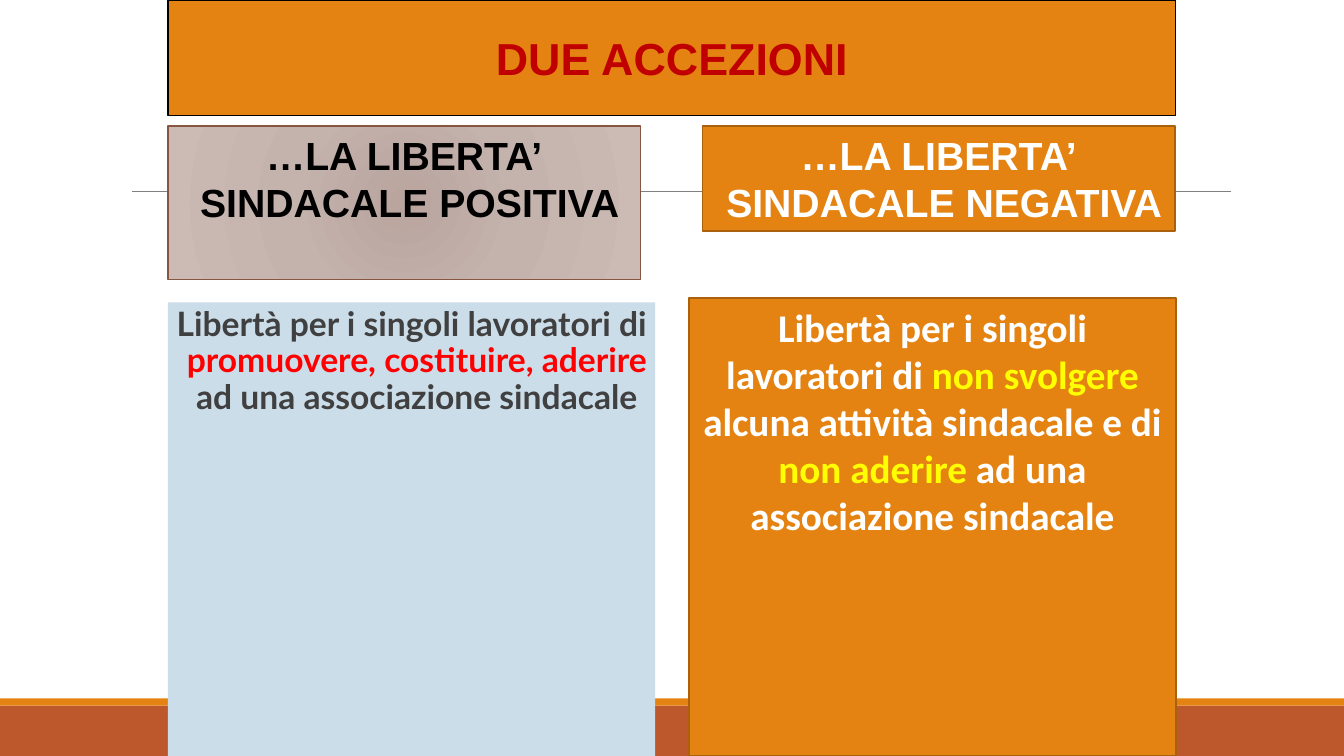
from dataclasses import dataclass
from typing import Optional

import pptx
import pptx.dml.color
import pptx.enum.shapes
import pptx.enum.text
import pptx.oxml
import pptx.oxml.ns
import pptx.util
from lxml import etree

RGBColor = pptx.dml.color.RGBColor
MSO_ANCHOR = pptx.enum.text.MSO_ANCHOR

EMU_PER_PX = 9525
SLIDE_WIDTH, SLIDE_HEIGHT = 1280, 720
TITLE_ONLY_LAYOUT = 5

ORANGE = RGBColor(0xE4, 0x83, 0x12)
DARK_ORANGE = RGBColor(0xA9, 0x61, 0x0D)
RUST = RGBColor(0xBD, 0x58, 0x2C)
BROWN = RGBColor(0x86, 0x56, 0x40)
LIGHT_BLUE = RGBColor(0xCC, 0xDD, 0xEA)
GRAY = RGBColor(0x80, 0x80, 0x80)
DARK_GRAY = RGBColor(0x40, 0x40, 0x40)
BLACK = RGBColor(0, 0, 0)
WHITE = RGBColor(0xFF, 0xFF, 0xFF)
RED = RGBColor(0xFF, 0, 0)
DARK_RED = RGBColor(0xC0, 0, 0)
YELLOW = RGBColor(0xFF, 0xFF, 0)
MAUVE_STOPS = (
    (0, RGBColor(0xB9, 0xA4, 0x9E)),
    (45, RGBColor(0xC4, 0xB2, 0xAD)),
    (100, RGBColor(0xCC, 0xBA, 0xB5)),
)

Paragraphs = list[list[tuple[str, RGBColor]]]


@dataclass(frozen=True)
class Box:
    left: int
    top: int
    width: int
    height: int
    fill: Optional[RGBColor] = None
    line: Optional[RGBColor] = None
    line_width: float = 1.25


FOOTER_BAND = Box(0, 672, SLIDE_WIDTH, 48, RUST)
FOOTER_STRIPE = Box(0, 665, SLIDE_WIDTH, 7, ORANGE)
TITLE = Box(160, 0, 960, 110, ORANGE, BLACK, 0.75)
POSITIVE_HEADING = Box(160, 120, 450, 146, None, BROWN, 1)
NEGATIVE_HEADING = Box(669, 120, 450, 100, ORANGE, DARK_ORANGE)
POSITIVE_BODY = Box(160, 288, 464, 432, LIGHT_BLUE)
NEGATIVE_BODY = Box(656, 284, 464, 436, ORANGE, DARK_ORANGE)


def px(length: int) -> pptx.util.Emu:
    return pptx.util.Emu(length * EMU_PER_PX)


def style_box(shape, box: Box) -> None:
    shape.left, shape.top = px(box.left), px(box.top)
    shape.width, shape.height = px(box.width), px(box.height)
    if box.fill is not None:
        shape.fill.solid()
        shape.fill.fore_color.rgb = box.fill
    if box.line is None:
        shape.line.fill.background()
    else:
        shape.line.color.rgb = box.line
        shape.line.width = pptx.util.Pt(box.line_width)


def add_box(slide, box: Box):
    shape = slide.shapes.add_shape(
        pptx.enum.shapes.MSO_SHAPE.RECTANGLE, 0, 0, 0, 0)
    shape.shadow.inherit = False
    style_box(shape, box)
    return shape


def write_text(shape, paragraphs: Paragraphs, *, size: int, font: str = "Arial",
               anchor: MSO_ANCHOR = MSO_ANCHOR.TOP, wrap: bool = True,
               side_inset: int = 10, hanging: int = 0,
               line_spacing: float = 1.0, space_after: int = 0) -> None:
    frame = shape.text_frame
    frame.auto_size = pptx.enum.text.MSO_AUTO_SIZE.NONE
    frame.word_wrap = wrap
    frame.vertical_anchor = anchor
    frame.margin_left = frame.margin_right = px(side_inset)
    frame.margin_top = frame.margin_bottom = px(5)
    for index, runs in enumerate(paragraphs):
        paragraph = frame.add_paragraph() if index else frame.paragraphs[0]
        paragraph.alignment = pptx.enum.text.PP_ALIGN.CENTER
        paragraph.line_spacing = line_spacing
        paragraph.space_after = pptx.util.Pt(space_after)
        if hanging:
            properties = paragraph._p.get_or_add_pPr()
            properties.set("marL", str(px(hanging)))
            properties.set("indent", str(px(-hanging)))
        for text, color in runs:
            run = paragraph.add_run()
            run.text = text
            run.font.name = font
            run.font.size = pptx.util.Pt(size)
            run.font.bold = True
            run.font.color.rgb = color


def fill_radial(shape, stops: tuple[tuple[int, RGBColor], ...]) -> None:
    """Fill a shape with a gradient spreading from its centre."""
    qn = pptx.oxml.ns.qn
    gradient = pptx.oxml.parse_xml(
        f'<a:gradFill {pptx.oxml.ns.nsdecls("a")} rotWithShape="1"><a:gsLst/>'
        '<a:path path="circle"><a:fillToRect l="100000" t="100000" '
        'r="100000" b="100000"/></a:path></a:gradFill>')
    for percent, color in stops:
        stop = etree.SubElement(gradient[0], qn("a:gs"), pos=str(percent * 1000))
        etree.SubElement(stop, qn("a:srgbClr"), val=str(color))
    shape._element.spPr.find(qn("a:prstGeom")).addnext(gradient)


def add_rule(slide, left: int, right: int, top: int) -> None:
    rule = slide.shapes.add_connector(
        pptx.enum.shapes.MSO_CONNECTOR.STRAIGHT,
        px(left), px(top), px(right), px(top))
    rule.line.color.rgb = GRAY
    rule.line.width = pptx.util.Pt(0.5)
    etree.SubElement(rule._element.spPr, pptx.oxml.ns.qn("a:effectLst"))


def main() -> None:
    presentation = pptx.Presentation()
    presentation.slide_width = px(SLIDE_WIDTH)
    presentation.slide_height = px(SLIDE_HEIGHT)
    slide = presentation.slides.add_slide(
        presentation.slide_layouts[TITLE_ONLY_LAYOUT])

    title = slide.shapes.title
    style_box(title, TITLE)
    write_text(title, [[("DUE ACCEZIONI", DARK_RED)]], size=32,
               anchor=MSO_ANCHOR.MIDDLE, wrap=False)

    add_box(slide, FOOTER_BAND)
    add_box(slide, FOOTER_STRIPE)
    add_rule(slide, 126, 1172, 182)

    write_text(add_box(slide, POSITIVE_BODY), [[
        ("Libertà per i singoli lavoratori di ", DARK_GRAY),
        ("promuovere, costituire, aderire ", RED),
        ("ad una associazione sindacale", DARK_GRAY),
    ]], size=24, font="Lato", side_inset=0, hanging=10, line_spacing=0.9,
        space_after=2)
    write_text(add_box(slide, NEGATIVE_BODY), [[
        ("Libertà per i singoli lavoratori di ", WHITE),
        ("non svolgere", YELLOW),
        (" alcuna attività sindacale e di ", WHITE),
        ("non aderire", YELLOW),
        (" ad una associazione sindacale", WHITE),
    ]], size=28, font="Calibri")

    positive_heading = add_box(slide, POSITIVE_HEADING)
    fill_radial(positive_heading, MAUVE_STOPS)
    negative_heading = add_box(slide, NEGATIVE_HEADING)
    for heading, kind, color in ((positive_heading, "POSITIVA", BLACK),
                                 (negative_heading, "NEGATIVA", WHITE)):
        write_text(heading, [[("…LA LIBERTA’", color)],
                             [(f" SINDACALE {kind}", color)]], size=28)

    presentation.save("out.pptx")


if __name__ == "__main__":
    main()
